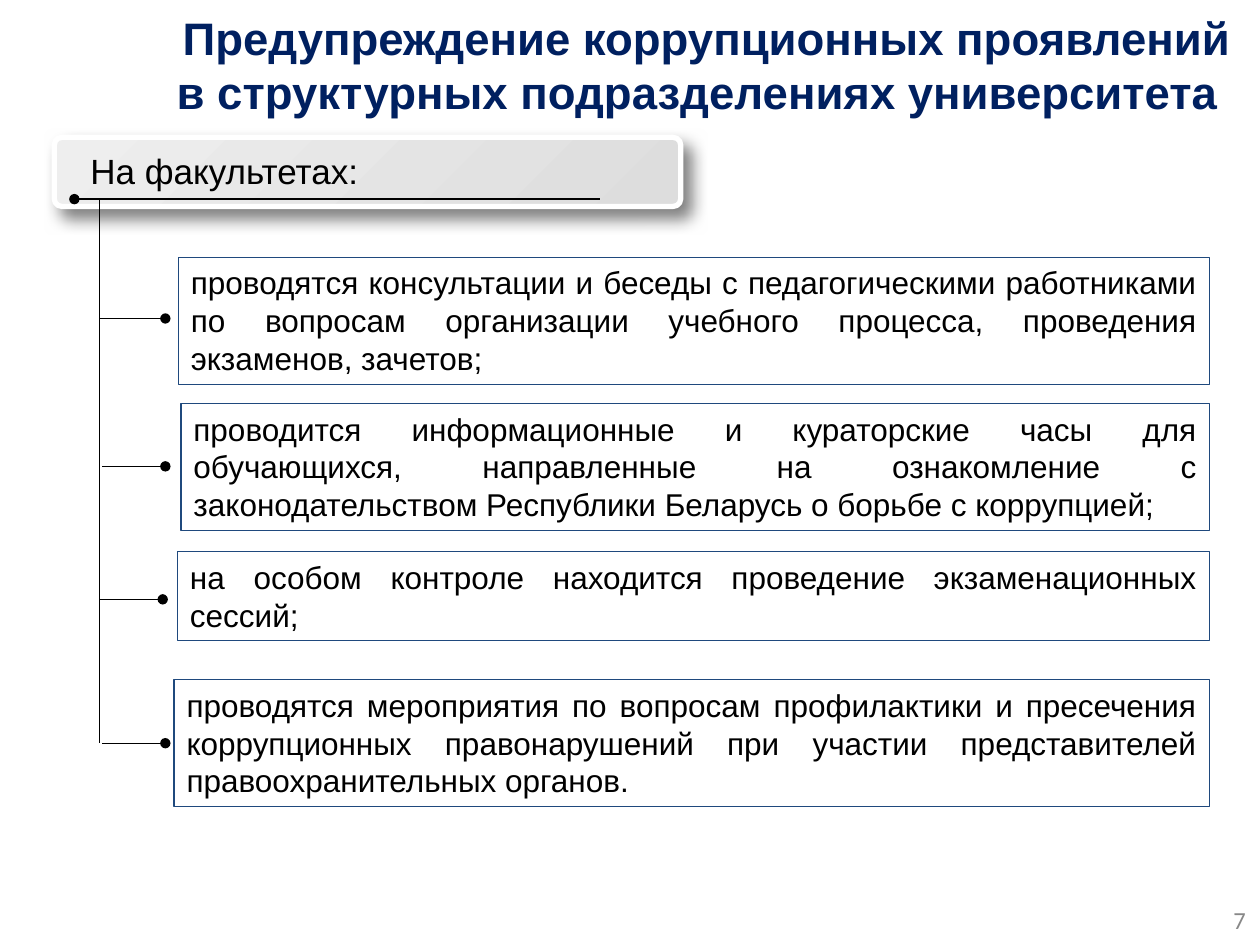
import pptx
import pptx.dml.color
import pptx.enum.dml
import pptx.enum.shapes
import pptx.enum.text
import pptx.oxml
import pptx.oxml.ns
import pptx.util

Pt = pptx.util.Pt
RGBColor = pptx.dml.color.RGBColor
Align = pptx.enum.text.PP_ALIGN
Anchor = pptx.enum.text.MSO_ANCHOR

NAVY = RGBColor(0x00, 0x20, 0x60)
FRAME_BLUE = RGBColor(0x1F, 0x49, 0x7D)
BLACK = RGBColor(0, 0, 0)
WHITE = RGBColor(0xFF, 0xFF, 0xFF)
LIGHT_GREY = RGBColor(0xEE, 0xEE, 0xEE)
MID_GREY = RGBColor(0xDD, 0xDD, 0xDD)
NUMBER_GREY = RGBColor(0x88, 0x88, 0x88)

BOX_RIGHT = 691
TRUNK_X = 57

# Left, top, height, branch start, branch end, branch level, text
MEASURES = [
    (102, 147, 72.7, TRUNK_X, 94.5, 182,
     "проводятся консультации и беседы с педагогическими работниками по вопросам "
     "организации учебного процесса, проведения экзаменов, зачетов;"),
    (103.5, 230.5, 72.7, 58.5, 94.5, 266.5,
     "проводится информационные и кураторские часы для обучающихся, направленные "
     "на ознакомление с законодательством Республики Беларусь о борьбе с коррупцией;"),
    (101.5, 315.3, 50.9, TRUNK_X, 93, 342.5,
     "на особом контроле находится проведение экзаменационных сессий;"),
    (99.5, 388.3, 72.7, 58.5, 94.5, 424.7,
     "проводятся мероприятия по вопросам профилактики и пресечения коррупционных "
     "правонарушений при участии представителей правоохранительных органов."),
]


def write(frame, text, size=18, color=BLACK, font="Arial", bold=False,
          align=Align.JUSTIFY, anchor=Anchor.TOP):
    frame.word_wrap = True
    frame.auto_size = pptx.enum.text.MSO_AUTO_SIZE.NONE
    frame.vertical_anchor = anchor
    paragraph = frame.paragraphs[0]
    paragraph.alignment = align
    run = paragraph.add_run()
    run.text = text
    run.font.size = Pt(size)
    run.font.name = font
    run.font.bold = bold
    run.font.color.rgb = color


def add_xml(parent, xml):
    namespace = pptx.oxml.ns.nsdecls("a")
    parent.append(pptx.oxml.parse_xml(xml.replace(" ", f" {namespace} ", 1)))


class SlideBuilder:
    thin = 0.75

    def __init__(self, slide):
        self.slide = slide

    def title(self, left, top, width, height, text, **style):
        heading = self.slide.shapes.title
        heading.left, heading.top = Pt(left), Pt(top)
        heading.width, heading.height = Pt(width), Pt(height)
        write(heading.text_frame, text, **style)

    def text(self, left, top, width, height, text, border=None, **style):
        box = self.slide.shapes.add_textbox(Pt(left), Pt(top), Pt(width), Pt(height))
        write(box.text_frame, text, **style)
        if border is not None:
            box.line.color.rgb = border
            box.line.width = Pt(self.thin)

    def banner(self, left, top, width, height):
        plate = self.slide.shapes.add_shape(
            pptx.enum.shapes.MSO_SHAPE.ROUNDED_RECTANGLE,
            Pt(left), Pt(top), Pt(width), Pt(height))
        plate.adjustments[0] = 0.11
        plate.fill.gradient()
        plate.fill.gradient_angle = 315
        for stop, color in zip(plate.fill.gradient_stops, (LIGHT_GREY, MID_GREY)):
            stop.color.rgb = color
        plate.line.color.rgb = WHITE
        plate.line.width = Pt(3)
        add_xml(plate.element.spPr,
                f'<a:effectLst ><a:outerShdw blurRad="{Pt(9)}" dist="{Pt(7)}" '
                'dir="2940000" algn="tl" rotWithShape="0"><a:srgbClr val="000000">'
                '<a:alpha val="50000"/></a:srgbClr></a:outerShdw></a:effectLst>')

    def line(self, x1, y1, x2, y2, dot=False):
        rule = self.slide.shapes.add_connector(
            pptx.enum.shapes.MSO_CONNECTOR.STRAIGHT, Pt(x1), Pt(y1), Pt(x2), Pt(y2))
        rule.line.color.rgb = BLACK
        rule.line.width = Pt(self.thin)
        if dot:
            add_xml(rule.line._get_or_add_ln(), '<a:headEnd type="oval"/>')
        add_xml(rule._element.spPr, '<a:effectLst />')


def main():
    deck = pptx.Presentation()
    deck.slide_width, deck.slide_height = Pt(720), Pt(540)
    builder = SlideBuilder(deck.slides.add_slide(deck.slide_layouts[5]))

    # Title and slide number
    builder.title(82.8, 0, 628, 73.5,
                  "Предупреждение коррупционных проявлений "
                  "в структурных подразделениях университета ",
                  size=26, color=NAVY, bold=True, align=Align.RIGHT,
                  anchor=Anchor.MIDDLE)
    builder.text(551, 511, 168, 29, "7", size=14, color=NUMBER_GREY,
                 font="Calibri", align=Align.RIGHT, anchor=Anchor.MIDDLE)

    # Heading plate with its underline
    builder.banner(31, 78.5, 358, 39.5)
    builder.text(44.6, 82, 351, 31.5, "На факультетах:", size=20)
    builder.line(42.5, 113.8, 342.7, 113.8, dot=True)

    # Trunk, branches and framed measures
    builder.line(TRUNK_X, 113.8, TRUNK_X, MEASURES[-1][5])
    for left, top, height, start, end, level, text in MEASURES:
        builder.line(end, level, start, level, dot=True)
        builder.text(left, top, BOX_RIGHT - left, height, text, border=FRAME_BLUE)

    deck.save("out.pptx")


if __name__ == "__main__":
    main()
